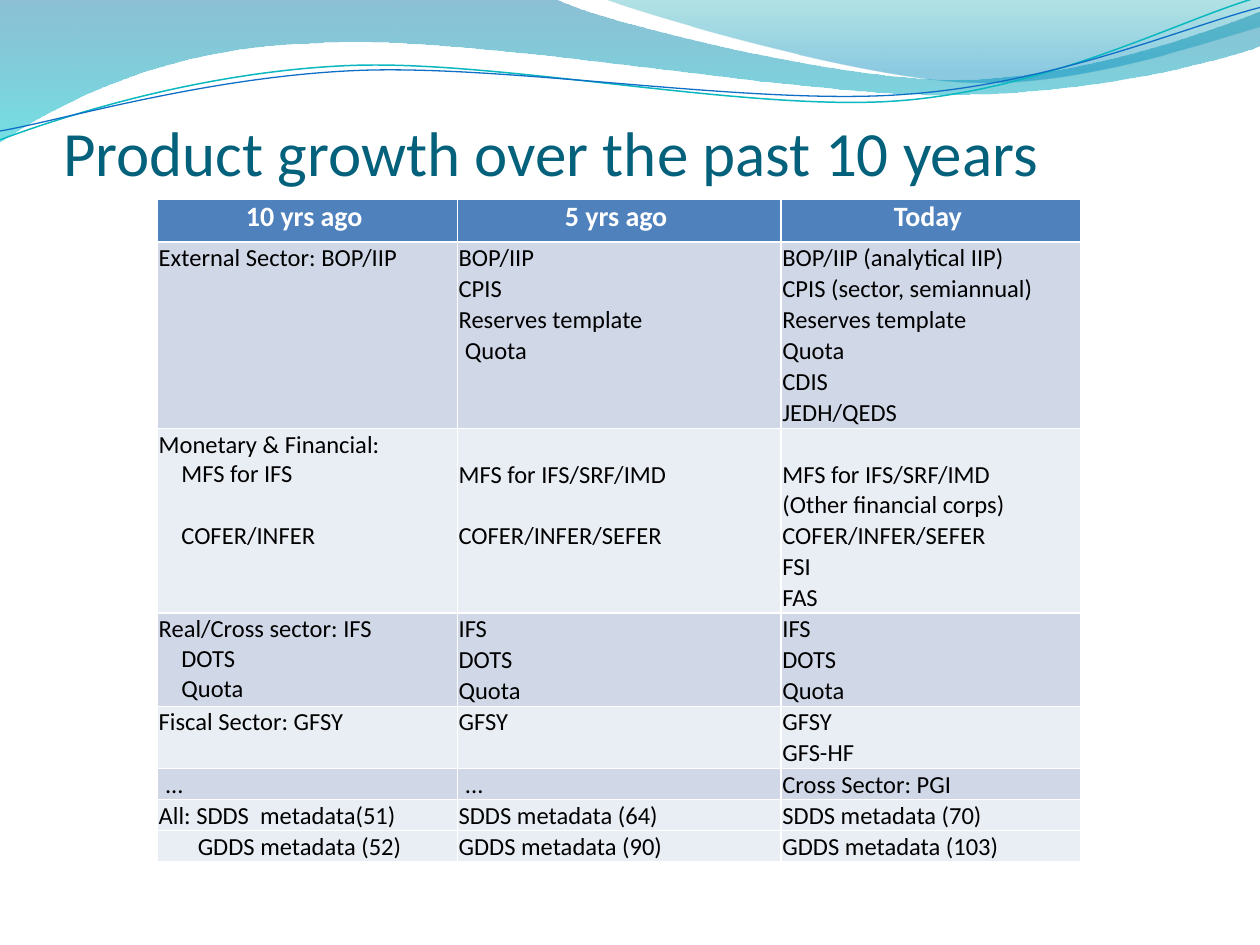
from dataclasses import dataclass
from math import cos, radians, sin

from lxml import etree
from pptx import Presentation
from pptx.dml.color import RGBColor
from pptx.enum.text import MSO_ANCHOR, MSO_AUTO_SIZE, PP_ALIGN
from pptx.oxml import parse_xml
from pptx.oxml.ns import nsdecls, qn
from pptx.util import Inches, Pt

LEFT, CENTER = PP_ALIGN.LEFT, PP_ALIGN.CENTER
TOP, BOTTOM = MSO_ANCHOR.TOP, MSO_ANCHOR.BOTTOM
NO_AUTOFIT = MSO_AUTO_SIZE.NONE
TITLE_ONLY = 5


@dataclass(frozen=True)
class Theme:
    """Colours, font and type sizes of the slide."""
    font: str = "Calibri"
    title_size: int = 36
    header_size: int = 16
    body_size: int = 14
    title: str = "04617B"
    body: str = "000000"
    white: str = "FFFFFF"
    header: str = "4F81BD"
    dark_band: str = "D0D8E8"
    light_band: str = "E9EDF4"
    teal_line: str = "0AB8BF"
    blue_line: str = "0F6FC6"
    left_wave: tuple = ((0, "0074A1", 45), (100, "00C6CF", 55))
    right_wave: tuple = ((0, "00A1A9", 30), (80, "008BBF", 45))


@dataclass(frozen=True)
class Entry:
    """Cell content: a heading, then items set in by an indent."""
    heading: str = ""
    items: tuple = ()
    indent: float = 0
    lower: float = 0

    def lines(self):
        """Return the text and indent of each line."""
        heading = [(self.heading, 0)] if self.heading else []
        return heading + [(item, self.indent) for item in self.items]


@dataclass(frozen=True)
class Group:
    """Table rows that share a fill and have no lines between them."""
    fill: str
    rows: tuple
    merged_columns: int = 0


THEME = Theme()
BLANK = Entry()
SUB_INDENT, METADATA_INDENT, SPACE_INDENT = 0.18, 0.31, 0.05
LINE_HEIGHT = 0.24
DOTS = Entry(items=("...",), indent=SPACE_INDENT)

GROUPS = (
    Group(THEME.header, (("10 yrs ago ", "5 yrs ago ", "Today "),)),
    Group(THEME.dark_band, (
        ("External Sector: BOP/IIP", "BOP/IIP", "BOP/IIP (analytical IIP)"),
        (BLANK, "CPIS", "CPIS (sector, semiannual)"),
        (BLANK, "Reserves template", "Reserves template"),
        (BLANK, Entry(items=("Quota",), indent=SPACE_INDENT), "Quota"),
        (BLANK, BLANK, "CDIS"),
        (BLANK, BLANK, "JEDH/QEDS")), 1),
    Group(THEME.light_band, (
        (Entry("Monetary & Financial:", ("MFS for IFS",), SUB_INDENT),
         Entry("MFS for IFS/SRF/IMD", lower=LINE_HEIGHT),
         Entry("MFS for IFS/SRF/IMD", ("(Other financial corps)",), lower=LINE_HEIGHT)),
        (Entry(items=("COFER/INFER",), indent=SUB_INDENT),
         "COFER/INFER/SEFER", "COFER/INFER/SEFER"),
        (BLANK, BLANK, "FSI"),
        (BLANK, BLANK, "FAS"))),
    Group(THEME.dark_band, (
        (Entry("Real/Cross sector: IFS", ("DOTS", "Quota"), SUB_INDENT), "IFS", "IFS"),
        (BLANK, "DOTS", "DOTS"),
        (BLANK, "Quota", "Quota")), 1),
    Group(THEME.light_band, (
        ("Fiscal Sector: GFSY", "GFSY", "GFSY"),
        (BLANK, BLANK, "GFS-HF")), 2),
    Group(THEME.dark_band, ((DOTS, DOTS, "Cross Sector: PGI"),)),
    Group(THEME.light_band, (
        ("All: SDDS  metadata(51)", "SDDS metadata (64)", "SDDS metadata (70)"),)),
    Group(THEME.light_band, (
        (Entry(items=("GDDS metadata (52)",), indent=METADATA_INDENT),
         "GDDS metadata (90)", "GDDS metadata (103)"),)),
)

LEFT_WAVE = ((0, 0), (4.4, -0.01), (4.76, 0.17, 6.64, 0.63, 7.58, 0.63),
             (8.53, 0.63, 9.58, 0.26, 10, 0.09), (10.01, 0.36),
             (9.83, 0.44, 8.7, 0.76, 7.46, 0.75), (6.22, 0.75, 3.82, 0.28, 2.57, 0.34),
             (1.29, 0.36, 0.46, 0.83, -0.01, 1.13))
RIGHT_WAVE = ((4.79, -0.01), (5.09, 0.11, 6.82, 0.62, 7.69, 0.65),
              (8.56, 0.69, 9.61, 0.32, 10, 0.21), (10, 0))
TEAL_CURVE = ((0, 1.11), (0.48, 0.93, 1.58, 0.57, 2.77, 0.52),
              (3.95, 0.47, 5.93, 0.89, 7.13, 0.8), (8.33, 0.71, 9.38, 0.15, 9.98, -0.02))
BLUE_CURVE = ((0, 1.04), (0.47, 0.96, 1.64, 0.61, 2.83, 0.56),
              (4.03, 0.51, 5.97, 0.84, 7.17, 0.75), (8.36, 0.67, 9.41, 0.21, 10, 0.06))
CURVE_TILT = -2.7


def write_text(frame, lines, *, size, color, bold=False, align=LEFT):
    """Write lines of (text, indent) with one format."""
    for index, (text, indent) in enumerate(lines or [("", 0)]):
        paragraph = frame.add_paragraph() if index else frame.paragraphs[0]
        paragraph.alignment = align
        if indent:
            paragraph._p.get_or_add_pPr().set("marL", str(Inches(indent)))
        if not text:
            etree.SubElement(paragraph._p, qn("a:endParaRPr"), sz=str(size * 100))
            continue
        run = paragraph.add_run()
        run.text = text
        run.font.name, run.font.size, run.font.bold = THEME.font, Pt(size), bold
        run.font.color.rgb = RGBColor.from_string(color)


def turn(points, center, degrees):
    """Turn points clockwise about a center."""
    (cx, cy), c, s = center, cos(radians(degrees)), sin(radians(degrees))
    return [(cx + (x - cx) * c - (y - cy) * s, cy + (x - cx) * s + (y - cy) * c)
            for x, y in points]


def add_outline(slide, path, *, closed, center=(0, 0), tilt=0):
    """Add a freeform of straight and cubic segments, without shadow."""
    points = [segment[i:i + 2] for segment in path for i in range(0, len(segment), 2)]
    corners = [(Inches(x), Inches(y)) for x, y in turn(points, center, -tilt)]
    builder = slide.shapes.build_freeform(*corners[0])
    builder.add_line_segments(corners[1:], close=closed)
    outline = builder.convert_to_shape()
    outline.shadow.inherit = False
    outline.rotation = tilt
    steps = iter(list(outline._element.iter(qn("a:lnTo"))))
    for segment in path[1:]:
        step = next(steps)
        if len(segment) == 6:
            step.tag = qn("a:cubicBezTo")
            for follower in (next(steps), next(steps)):
                step.append(follower[0])
                follower.getparent().remove(follower)
    return outline


def add_waves(slide):
    """Draw the translucent waves and thin curves along the top."""
    for path, stops in ((LEFT_WAVE, THEME.left_wave), (RIGHT_WAVE, THEME.right_wave)):
        wave = add_outline(slide, path, closed=True)
        wave.line.fill.background()
        stop_xml = "".join(
            f'<a:gs pos="{pos * 1000}"><a:srgbClr val="{color}">'
            f'<a:alpha val="{alpha * 1000}"/></a:srgbClr></a:gs>' for pos, color, alpha in stops)
        gradient = parse_xml(f'<a:gradFill {nsdecls("a")}><a:gsLst>{stop_xml}</a:gsLst>'
                             '<a:lin ang="5400000" scaled="0"/></a:gradFill>')
        wave._element.spPr.find(qn("a:custGeom")).addnext(gradient)
    for path, center, color, width in ((TEAL_CURVE, (4.99, 0.58), THEME.teal_line, 0.85),
                                       (BLUE_CURVE, (5, 0.59), THEME.blue_line, 0.75)):
        curve = add_outline(slide, path, closed=False, center=center, tilt=CURVE_TILT)
        curve.fill.background()
        curve.line.color.rgb = RGBColor.from_string(color)
        curve.line.width = Pt(width)


def place_title(slide, text, left, top, width, height):
    """Place the title placeholder in front of the waves."""
    title = slide.shapes.title
    slide.shapes._spTree.append(title._element)
    title.left, title.top, title.width, title.height = map(Inches, (left, top, width, height))
    frame = title.text_frame
    frame.auto_size, frame.word_wrap, frame.vertical_anchor = NO_AUTOFIT, True, BOTTOM
    frame.margin_left = frame.margin_right = frame.margin_bottom = 0
    frame.margin_top = Inches(0.05)
    write_text(frame, [(text, 0)], size=THEME.title_size, color=THEME.title)


def set_borders(cell, **widths):
    """Draw white borders, or none where the width is zero."""
    properties = cell._tc.get_or_add_tcPr()
    for side in "LRTB":
        width = widths[side]
        line = etree.SubElement(properties, qn(f"a:ln{side}"), w=str(Pt(width)))
        fill = etree.SubElement(line, qn("a:solidFill" if width else "a:noFill"))
        if width:
            etree.SubElement(fill, qn("a:srgbClr"), val=THEME.white)


def fill_cell(cell, content, fill, top_line, bottom_line, header):
    """Format one table cell and write its entry."""
    entry = Entry(content) if isinstance(content, str) else content
    set_borders(cell, L=1, R=1, T=top_line, B=bottom_line)
    cell.fill.solid()
    cell.fill.fore_color.rgb = RGBColor.from_string(fill)
    cell.margin_left = cell.margin_right = Inches(0.01)
    cell.margin_top, cell.margin_bottom = Inches(0.01 + entry.lower), 0
    cell.vertical_anchor = TOP
    write_text(cell.text_frame, entry.lines(), bold=header,
               size=THEME.header_size if header else THEME.body_size,
               color=THEME.white if header else THEME.body,
               align=CENTER if header else LEFT)


def add_growth_table(slide, left, top, width, height):
    """Build the product table from its row groups."""
    row_count = sum(len(group.rows) for group in GROUPS)
    table = slide.shapes.add_table(row_count, 3, *map(Inches, (left, top, width, height))).table
    table.first_row = table.horz_banding = False
    for column, share in zip(table.columns, (2.38, 2.57, 2.38)):
        column.width = Inches(width * share / 7.33)
    for row in table.rows:
        row.height = Inches(LINE_HEIGHT)
    table.rows[0].height = Inches(0.34)
    first = 0
    for number, group in enumerate(GROUPS):
        last = first + len(group.rows) - 1
        for index, contents in enumerate(group.rows, first):
            top_line = (1.5 if number == 1 else 1) if index == first else 0
            bottom_line = (1.5 if number == 0 else 1) if index == last else 0
            for column, content in enumerate(contents):
                fill_cell(table.cell(index, column), content, group.fill,
                          top_line, bottom_line, header=number == 0)
        for column in range(group.merged_columns):
            table.cell(first, column).merge(table.cell(last, column))
        first = last + 1


def main():
    """Build and save the slide."""
    deck = Presentation()
    deck.slide_width, deck.slide_height = Inches(10), Inches(7.5)
    slide = deck.slides.add_slide(deck.slide_layouts[TITLE_ONLY])
    add_waves(slide)
    place_title(slide, "Product growth over the past 10 years", 0.5, 0.25, 9, 1.25)
    add_growth_table(slide, 1.25, 1.58, 7.33, 5.19)
    deck.save("out.pptx")


if __name__ == "__main__":
    main()
